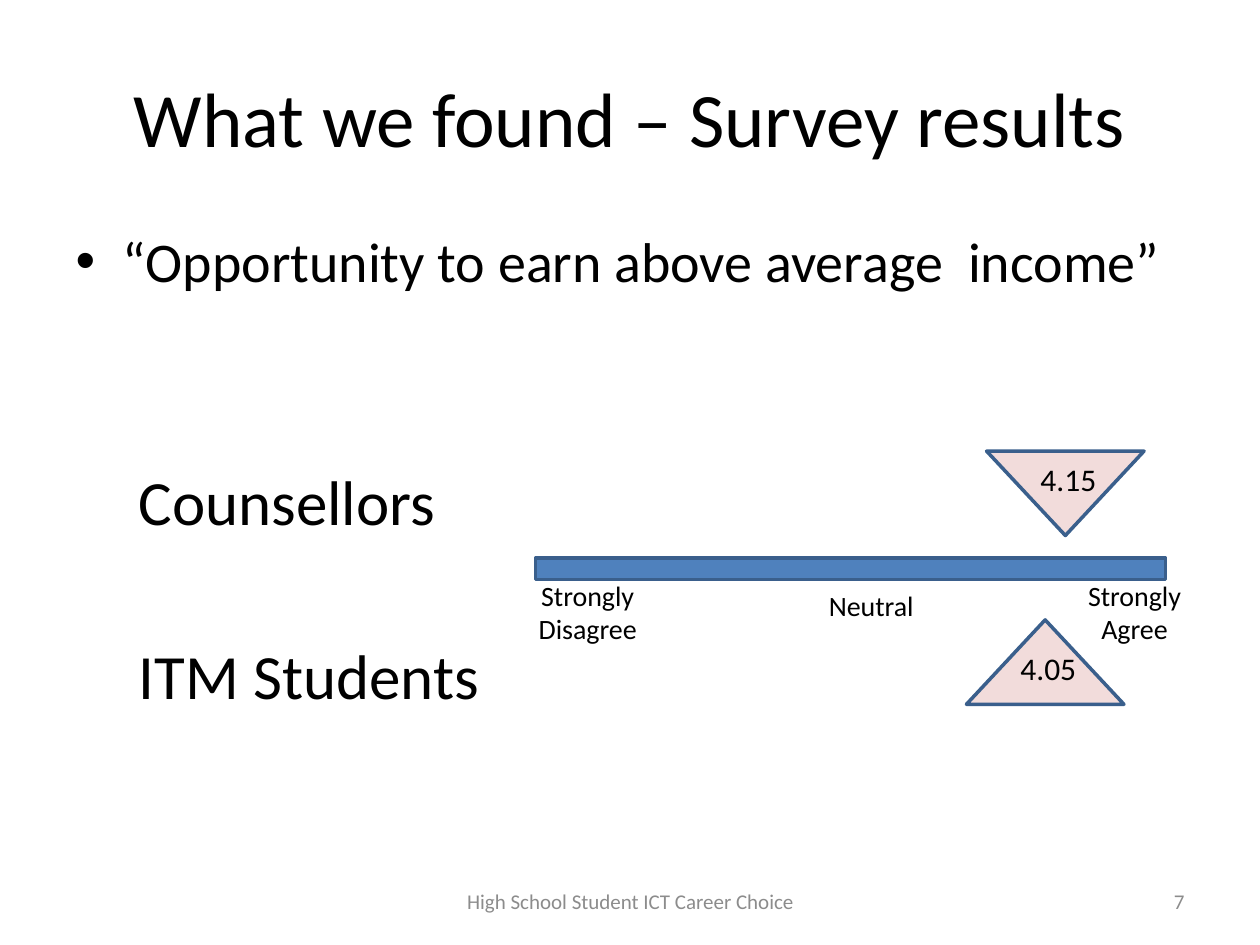
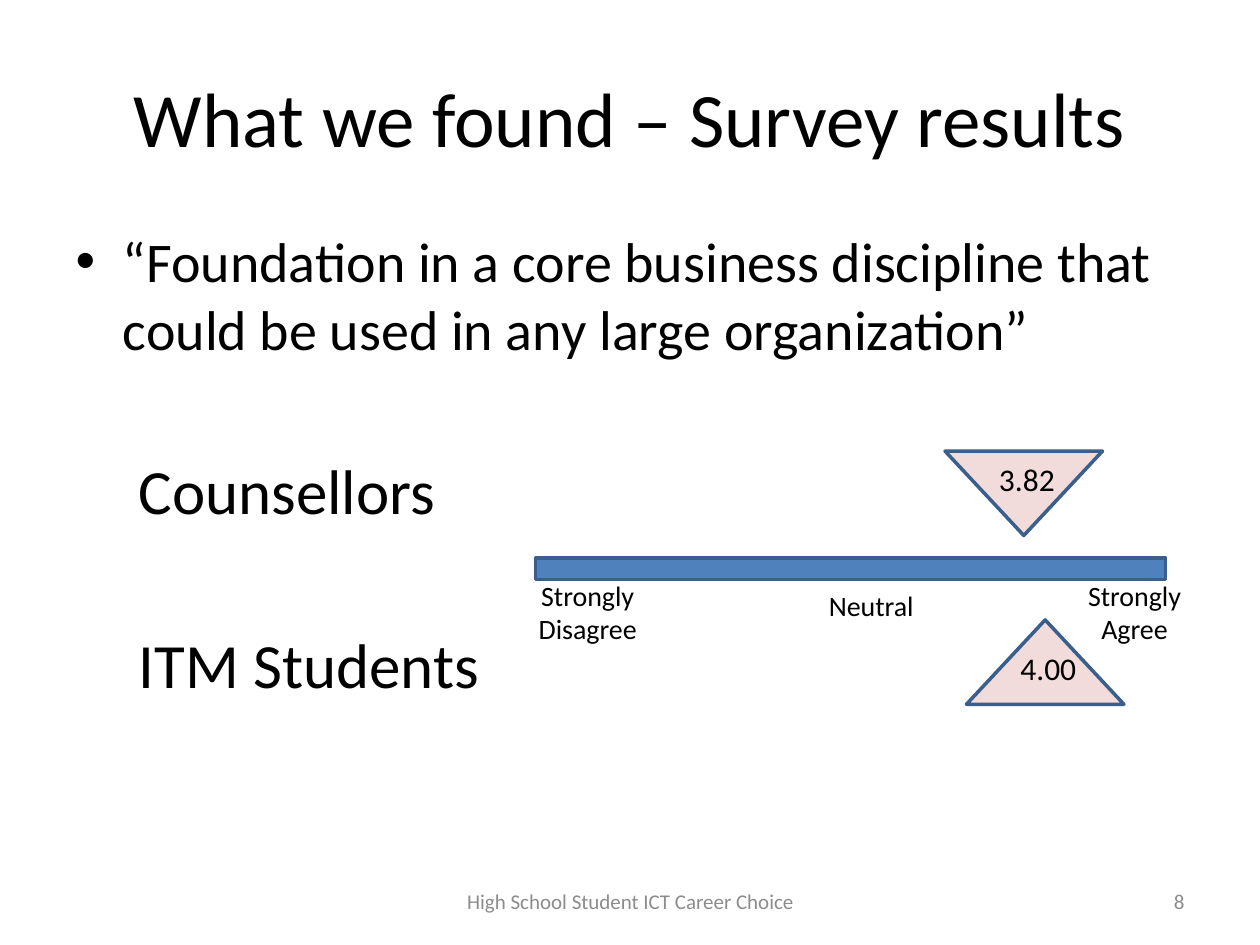
from pptx import Presentation
from pptx import util as u
from pptx.dml.color import RGBColor
from pptx.enum import shapes, text
from pptx.oxml.ns import qn

BLACK = RGBColor(0x00, 0x00, 0x00)
GREY = RGBColor(0x8C, 0x8C, 0x8C)
BLUE = RGBColor(0x4F, 0x81, 0xBD)
NAVY = RGBColor(0x3A, 0x5F, 0x8C)
PINK = RGBColor(0xF2, 0xDC, 0xDB)

FONT = "Calibri"
CENTER = text.PP_ALIGN.CENTER
LEFT = text.PP_ALIGN.LEFT
RIGHT = text.PP_ALIGN.RIGHT

HEADING = "What we found – Survey results"
FOOTER = "High School Student ICT Career Choice"
SCALE_LABELS = [
    ("Strongly Disagree", (4.08, 4.54, 1.17, 0.64)),
    ("Strongly Agree", (8.42, 4.54, 1.17, 0.64)),
    ("Neutral", (6.33, 4.62, 1.17, 0.37)),
]
SURVEY_ITEMS = [
    dict(number=7, statement="“Opportunity to earn above average  income”",
         gap=96, counsellors=("4.15", 7.83), students=("4.05", 7.67)),
    dict(number=8, statement="“Foundation in a core business discipline that "
         "could be used in any large organization”",
         gap=51.5, counsellors=("3.82", 7.5), students=("4.00", 7.67)),
]


def write(paragraph, wording, size=18, color=BLACK, align=LEFT, before=None):
    paragraph.alignment = align
    if before is not None:
        paragraph.space_before = u.Pt(before)
    run = paragraph.add_run()
    run.text = wording
    run.font.name = FONT
    run.font.size = u.Pt(size)
    run.font.color.rgb = color


class SurveyDeck:
    def __init__(self):
        self.deck = Presentation()
        self.deck.slide_width = u.Inches(10)
        self.deck.slide_height = u.Inches(7.5)
        self.slide = None

    def start_slide(self):
        self.slide = self.deck.slides.add_slide(self.deck.slide_layouts[1])

    def place(self, placeholder, left, top, width, height):
        placeholder.left, placeholder.top = u.Inches(left), u.Inches(top)
        placeholder.width, placeholder.height = u.Inches(width), u.Inches(height)
        placeholder.text_frame.auto_size = text.MSO_AUTO_SIZE.NONE
        return placeholder.text_frame

    def title(self, wording):
        frame = self.place(self.slide.shapes.title, 0.5, 0.3, 9, 1.25)
        write(frame.paragraphs[0], wording, size=44, align=CENTER)

    def body(self, statement, groups):
        frame = self.place(self.slide.placeholders[1], 0.5, 1.75, 9, 4.95)
        write(frame.paragraphs[0], statement, size=32)
        for group, gap in groups:
            paragraph = frame.add_paragraph()
            paragraph.level = 1
            write(paragraph, group, size=36, before=gap)
            properties = paragraph._p.get_or_add_pPr()
            properties.append(properties.makeelement(qn("a:buNone"), {}))

    def label(self, wording, box, anchor=text.MSO_ANCHOR.TOP, **style):
        frame = self.slide.shapes.add_textbox(*map(u.Inches, box)).text_frame
        frame.word_wrap = True
        frame.vertical_anchor = anchor
        write(frame.paragraphs[0], wording, **style)

    def figure(self, kind, box, fill):
        figure = self.slide.shapes.add_shape(kind, *map(u.Inches, box))
        figure.shadow.inherit = False
        figure.fill.solid()
        figure.fill.fore_color.rgb = fill
        figure.line.color.rgb = NAVY
        figure.line.width = u.Pt(2)
        return figure

    def marker(self, score, left, top, score_top, rotation=0):
        triangle = self.figure(shapes.MSO_SHAPE.ISOSCELES_TRIANGLE,
                               (left, top, 1.25, 0.67), PINK)
        triangle.rotation = rotation
        self.label(score, (left + 0.33, score_top, 0.67, 0.4))

    def scale(self):
        self.figure(shapes.MSO_SHAPE.RECTANGLE, (4.25, 4.43, 5, 0.17), BLUE)
        for wording, box in SCALE_LABELS:
            self.label(wording, box, size=16, align=CENTER)

    def footer(self, number):
        style = dict(anchor=text.MSO_ANCHOR.MIDDLE, size=12, color=GREY)
        self.label(str(number), (7.17, 6.95, 2.33, 0.4), align=RIGHT, **style)
        self.label(FOOTER, (3.42, 6.95, 3.17, 0.4), align=CENTER, **style)

    def survey_slide(self, number, statement, gap, counsellors, students):
        self.start_slide()
        self.title(HEADING)
        self.body(statement, [("Counsellors", gap), ("ITM Students", 56.5)])
        self.footer(number)
        self.scale()
        self.marker(*students, top=4.92, score_top=5.1)
        self.marker(*counsellors, top=3.58, score_top=3.6, rotation=180)


def main():
    survey = SurveyDeck()
    for item in SURVEY_ITEMS:
        survey.survey_slide(**item)
    survey.deck.save("out.pptx")


if __name__ == "__main__":
    main()
